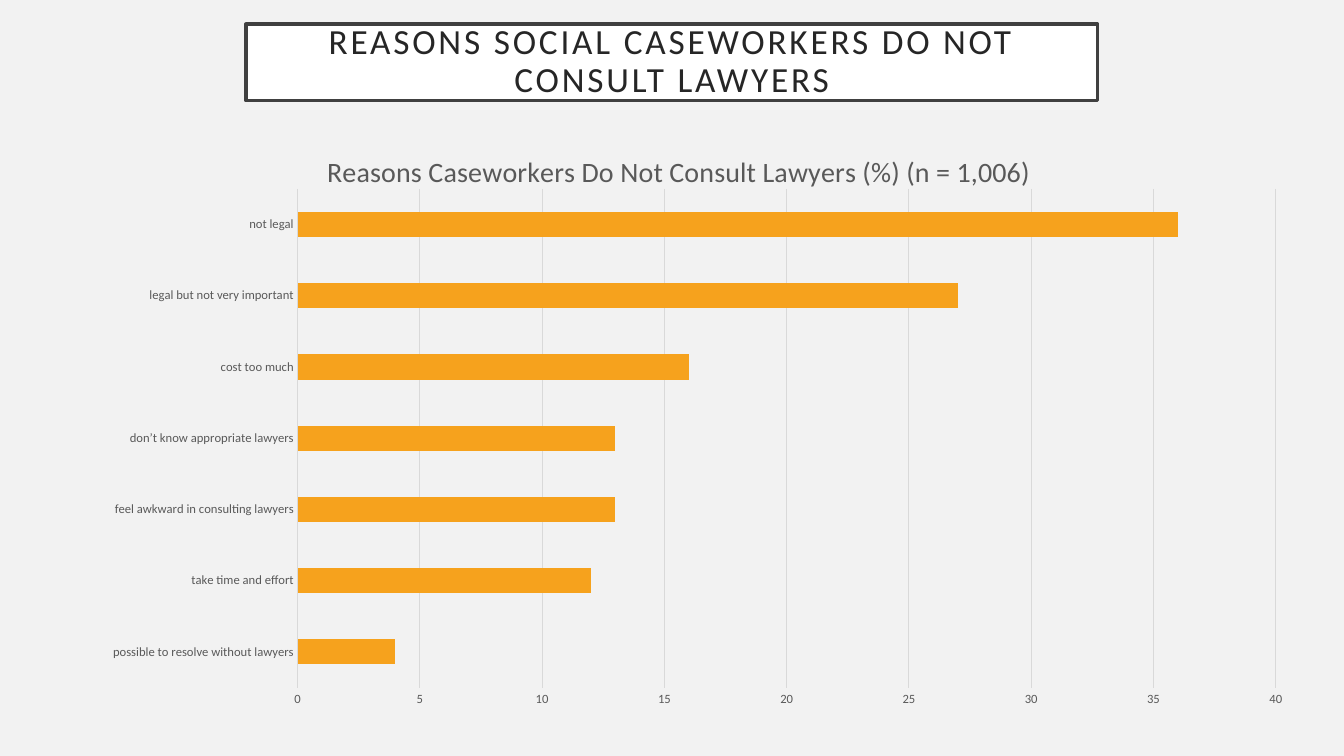
import pptx
import pptx.chart.data
import pptx.dml.color
import pptx.enum.chart
import pptx.enum.shapes
import pptx.enum.text
import pptx.oxml
import pptx.oxml.ns
import pptx.util

Pt = pptx.util.Pt
COLORS = {
    "background": "F2F2F2",
    "box": "FFFFFF",
    "border": "404040",
    "heading": "262626",
    "label": "595959",
    "grid": "D9D9D9",
    "bar": "F6A21D",
}
FONT = "Calibri"
HEADING = "REASONS SOCIAL CASEWORKERS DO NOT CONSULT LAWYERS"
CHART_TITLE = "Reasons Caseworkers Do Not Consult Lawyers (%) (n = 1,006)"
REASONS = {
    "possible to resolve without lawyers": 4,
    "take time and effort": 12,
    "feel awkward in consulting lawyers": 13,
    "don’t know appropriate lawyers": 13,
    "cost too much": 16,
    "legal but not very important": 27,
    "not legal": 36,
}


def color(name):
    """Return the named colour as an RGB value."""
    return pptx.dml.color.RGBColor.from_string(COLORS[name])


def apply_format(target, values):
    """Set each attribute of the target from a dict."""
    for name, value in values.items():
        setattr(target, name, value)


def style_font(font, size, color_name):
    """Give a font its face, size and colour."""
    apply_format(font, {"name": FONT, "size": Pt(size), "bold": False})
    font.color.rgb = color(color_name)


def fill_solid(fill, color_name):
    """Fill with one named colour."""
    fill.solid()
    fill.fore_color.rgb = color(color_name)


def style_line(line, color_name, width):
    """Give a line its colour and width."""
    fill_solid(line.fill, color_name)
    line.width = Pt(width)


def place(element, index, target, **fractions):
    """Position a chart part by fractions of the chart size."""
    for layout in element.findall(pptx.oxml.ns.qn("c:layout")):
        element.remove(layout)
    modes = {"xMode": "edge", "yMode": "edge"}
    settings = {**target, **modes, **fractions}
    items = "".join(f'<c:{name} val="{value}"/>' for name, value in settings.items())
    namespace = pptx.oxml.ns.nsdecls("c")
    xml = f"<c:layout {namespace}><c:manualLayout>{items}</c:manualLayout></c:layout>"
    element.insert(index, pptx.oxml.parse_xml(xml))


def add_heading(slide, text, left, top, width, height):
    """Add the bordered heading box."""
    rectangle = pptx.enum.shapes.MSO_SHAPE.RECTANGLE
    shape = slide.shapes.add_shape(rectangle, Pt(left), Pt(top), Pt(width), Pt(height))
    shape.shadow.inherit = False
    fill_solid(shape.fill, "box")
    style_line(shape.line, "border", 2.5)
    margins = ("margin_left", "margin_top", "margin_right", "margin_bottom")
    frame = shape.text_frame
    apply_format(frame, {
        "word_wrap": True,
        "vertical_anchor": pptx.enum.text.MSO_ANCHOR.MIDDLE,
        **dict.fromkeys(margins, Pt(14.4)),
    })
    paragraph = frame.paragraphs[0]
    apply_format(paragraph, {
        "alignment": pptx.enum.text.PP_ALIGN.CENTER,
        "line_spacing": 0.9,
    })
    run = paragraph.add_run()
    run.text = text
    style_font(run.font, 25.2, "heading")
    run.font._element.set("spc", "200")


def style_axis(axis):
    """Format the tick labels and hide the tick marks."""
    no_tick = pptx.enum.chart.XL_TICK_MARK.NONE
    apply_format(axis, {"major_tick_mark": no_tick, "minor_tick_mark": no_tick})
    style_font(axis.tick_labels.font, 9, "label")


def add_bar_chart(slide, title, reasons, left, top, width, height):
    """Add the horizontal bar chart of reasons."""
    data = pptx.chart.data.CategoryChartData()
    data.categories = list(reasons)
    data.add_series("Series 1", list(reasons.values()))
    kind = pptx.enum.chart.XL_CHART_TYPE.BAR_CLUSTERED
    frame = slide.shapes.add_chart(kind, Pt(left), Pt(top), Pt(width), Pt(height), data)
    chart = frame.chart
    apply_format(chart, {"has_legend": False, "has_title": True})
    style_font(chart.font, 10, "label")

    paragraph = chart.chart_title.text_frame.paragraphs[0]
    run = paragraph.add_run()
    run.text = title
    style_font(run.font, 20, "label")
    place(chart.chart_title._element, 1, {}, x=0.19, y=0.05)

    style_axis(chart.category_axis)
    style_line(chart.category_axis.format.line, "grid", 0.75)
    value_axis = chart.value_axis
    style_axis(value_axis)
    apply_format(value_axis, {
        "minimum_scale": 0,
        "maximum_scale": 40,
        "major_unit": 5,
        "has_major_gridlines": True,
    })
    value_axis.format.line.fill.background()
    style_line(value_axis.major_gridlines.format.line, "grid", 0.75)

    plot = chart.plots[0]
    apply_format(plot, {"gap_width": 182, "vary_by_categories": False})
    fill_solid(plot.series[0].format.fill, "bar")
    plot_area = plot._element.getparent()
    place(plot_area, 0, {"layoutTarget": "inner"}, x=0.17, y=0.12, w=0.8, h=0.83)


def main():
    """Build and save the slide."""
    presentation = pptx.Presentation()
    apply_format(presentation, {"slide_width": Pt(960), "slide_height": Pt(540)})
    slide = presentation.slides.add_slide(presentation.slide_layouts[6])
    fill_solid(slide.background.fill, "background")
    add_heading(slide, HEADING, 175.7, 17.3, 608.4, 54.7)
    add_bar_chart(slide, CHART_TITLE, REASONS, 64.1, 83.5, 873.4, 429.1)
    presentation.save("out.pptx")


if __name__ == "__main__":
    main()
